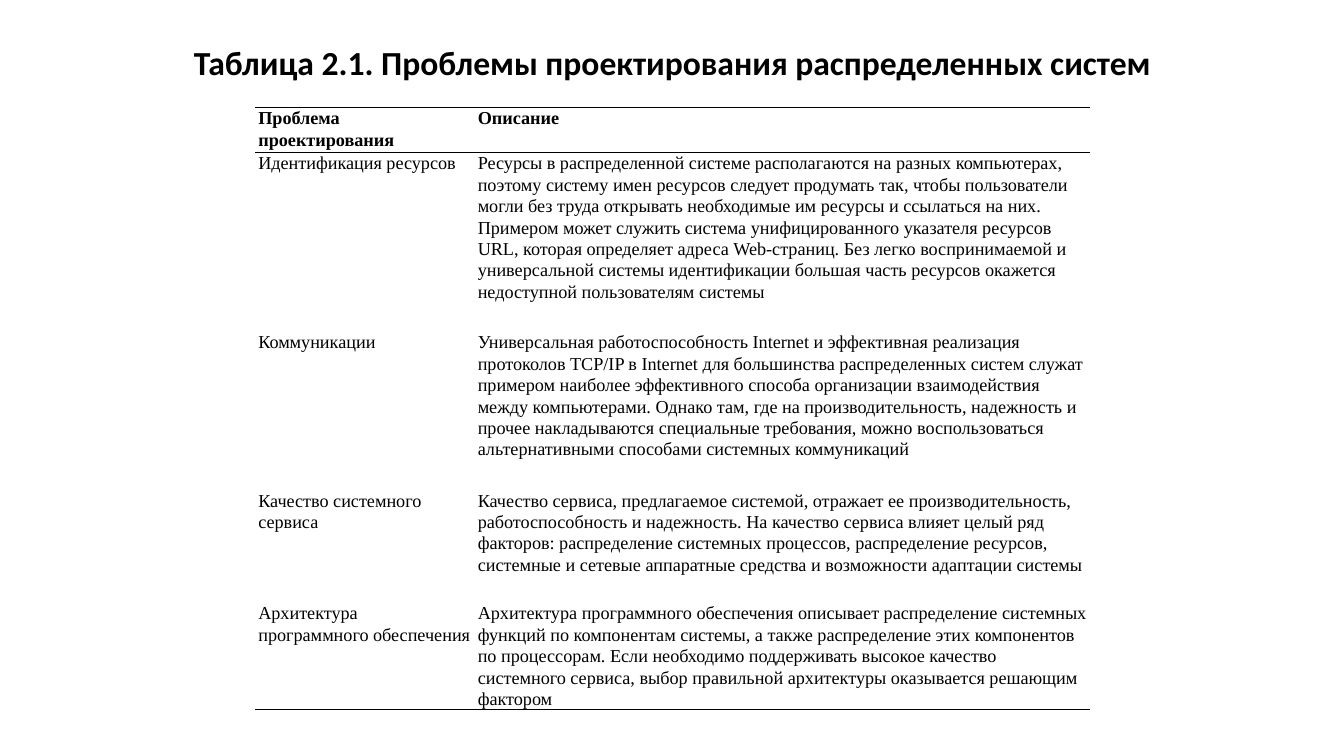
from lxml.etree import SubElement
from pptx import Presentation
from pptx.dml.color import RGBColor
from pptx.enum.text import MSO_ANCHOR, MSO_AUTO_SIZE, PP_ALIGN
from pptx.oxml.ns import qn
from pptx.util import Cm, Pt

HUES = {"ink": "000000", "paper": "FFFFFF"}
TITLE = "Таблица 2.1. Проблемы проектирования распределенных систем"
ROWS = [
    ("Проблема проектирования", "Описание"),
    ("Идентификация ресурсов",
     "Ресурсы в распределенной системе располагаются на разных компьютерах, "
     "поэтому систему имен ресурсов следует продумать так, чтобы пользователи "
     "могли без труда открывать необходимые им ресурсы и ссылаться на них. "
     "Примером может служить система унифицированного указателя ресурсов URL, "
     "которая определяет адреса Web-страниц. Без легко воспринимаемой и "
     "универсальной системы идентификации большая часть ресурсов окажется "
     "недоступной пользователям системы"),
    ("Коммуникации",
     "Универсальная работоспособность Internet и эффективная реализация "
     "протоколов TCP/IP в Internet для большинства распределенных систем служат "
     "примером наиболее эффективного способа организации взаимодействия между "
     "компьютерами. Однако там, где на производительность, надежность и прочее "
     "накладываются специальные требования, можно воспользоваться "
     "альтернативными способами системных коммуникаций"),
    ("Качество системного сервиса",
     "Качество сервиса, предлагаемое системой, отражает ее производительность, "
     "работоспособность и надежность. На качество сервиса влияет целый ряд "
     "факторов: распределение системных процессов, распределение ресурсов, "
     "системные и сетевые аппаратные средства и возможности адаптации системы"),
    ("Архитектура программного обеспечения",
     "Архитектура программного обеспечения описывает распределение системных "
     "функций по компонентам системы, а также распределение этих компонентов "
     "по процессорам. Если необходимо поддерживать высокое качество системного "
     "сервиса, выбор правильной архитектуры оказывается решающим фактором"),
]
HEIGHTS = [1.14, 3.99, 3.99, 2.84, 3.22]
SHARES = [0.263, 0.737]
GAP = 0.52


def write(frame, text, font="Times New Roman", size=13, bold=False,
          align=PP_ALIGN.LEFT, lead=1.07):
    frame.word_wrap = True
    par = frame.paragraphs[0]
    par.alignment = align
    par.line_spacing = lead
    par.space_before = Pt(0)
    run = par.add_run()
    run.text = text
    run.font.name = font
    run.font.size = Pt(size)
    run.font.bold = bold
    run.font.color.rgb = RGBColor.from_string(HUES["ink"])


def rule(cell, sides):
    props = cell._tc.get_or_add_tcPr()
    for spot, side in enumerate("LRTB"):
        line = SubElement(props, qn(f"a:ln{side}"), w=str(Pt(1)))
        if side in sides:
            fill = SubElement(line, qn("a:solidFill"))
            SubElement(fill, qn("a:srgbClr"), val=HUES["ink"])
        else:
            SubElement(line, qn("a:noFill"))
        props.insert(spot, line)


def head(slide, left, top, width, height):
    title = slide.shapes.title
    title.left, title.top = Cm(left), Cm(top)
    title.width, title.height = Cm(width), Cm(height)
    frame = title.text_frame
    frame.auto_size = MSO_AUTO_SIZE.NONE
    frame.vertical_anchor = MSO_ANCHOR.TOP
    write(frame, TITLE, font="Calibri", size=24, bold=True,
          align=PP_ALIGN.CENTER, lead=0.9)


def grid(slide, left, top, width):
    table = slide.shapes.add_table(
        len(ROWS), len(SHARES), Cm(left), Cm(top), Cm(width), Cm(sum(HEIGHTS))
    ).table
    table.first_row = table.horz_banding = False
    for col, share in zip(table.columns, SHARES):
        col.width = Cm(width * share)
    last = len(ROWS) - 1
    for i, texts in enumerate(ROWS):
        table.rows[i].height = Cm(HEIGHTS[i])
        sides = {0: "TB", 1: "T", last: "B"}.get(i, "")
        for j, text in enumerate(texts):
            cell = table.cell(i, j)
            cell.margin_left = cell.margin_right = Cm(0.08)
            cell.margin_top = Cm(GAP if i > 1 else 0)
            cell.margin_bottom = Cm(0)
            cell.fill.solid()
            cell.fill.fore_color.rgb = RGBColor.from_string(HUES["paper"])
            rule(cell, sides)
            write(cell.text_frame, text, bold=i == 0)


def main():
    deck = Presentation()
    deck.slide_width, deck.slide_height = Cm(33.87), Cm(19.05)
    slide = deck.slides.add_slide(deck.slide_layouts[5])
    head(slide, 2.34, 1.04, 29.21, 1.35)
    grid(slide, 6.43, 2.7, 21.03)
    deck.save("out.pptx")


if __name__ == "__main__":
    main()
